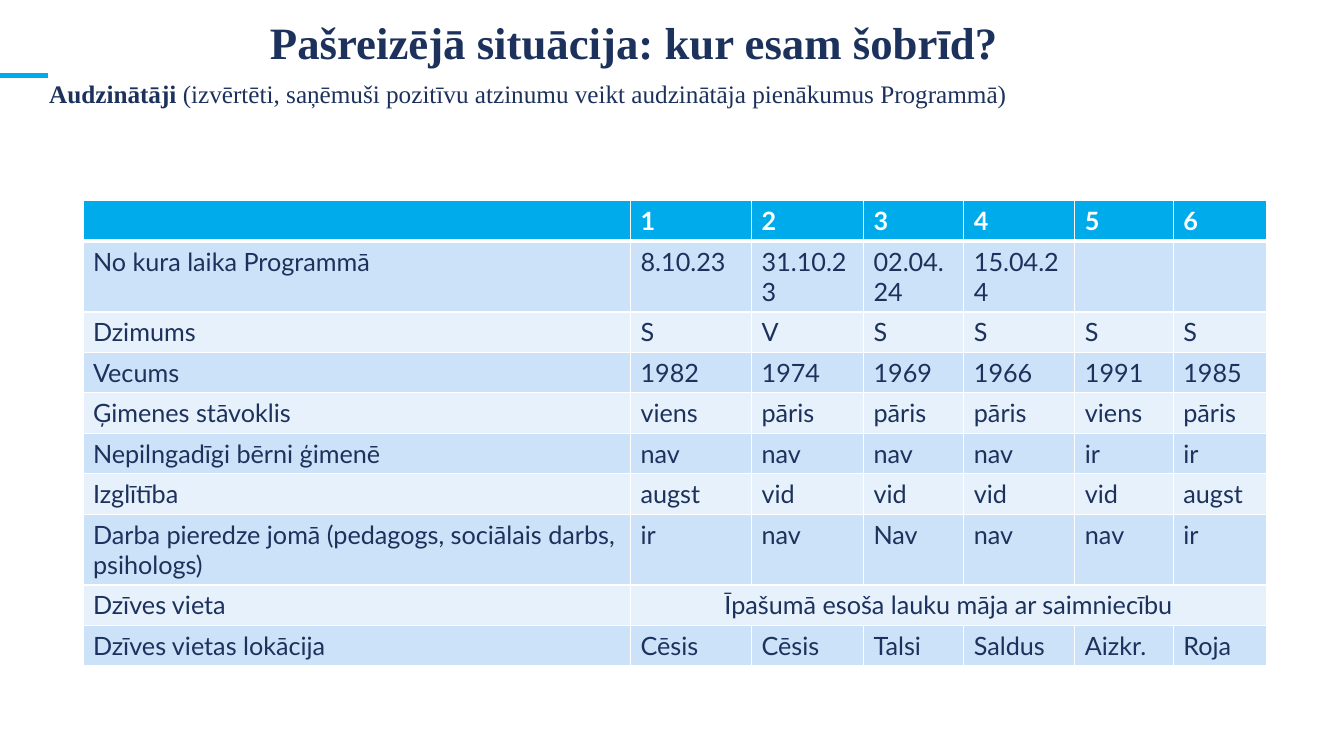
from dataclasses import dataclass

from lxml import etree
from pptx import Presentation
from pptx.dml.color import RGBColor
from pptx.enum.shapes import MSO_CONNECTOR
from pptx.enum.text import MSO_ANCHOR, MSO_AUTO_SIZE, PP_ALIGN
from pptx.oxml.ns import qn
from pptx.util import Cm, Pt

STRAIGHT = MSO_CONNECTOR.STRAIGHT
TOP, MIDDLE = MSO_ANCHOR.TOP, MSO_ANCHOR.MIDDLE
LEFT, CENTER = PP_ALIGN.LEFT, PP_ALIGN.CENTER
NO_AUTOFIT = MSO_AUTO_SIZE.NONE
TITLE_ONLY = 5


@dataclass(frozen=True)
class Theme:
    navy: str = "1C325D"
    cyan: str = "00ABEC"
    white: str = "FFFFFF"
    bands: tuple = ("CCE2F8", "E7F1FB")
    heading_font: str = "Times New Roman"
    table_font: str = "Lato"
    title_size: int = 32
    text_size: int = 18
    accent_width: float = 3.2
    border_width: int = 1
    header_border_width: int = 3


THEME = Theme()

COLUMN_WIDTHS = (13.8, 3.05, 2.82, 2.53, 2.8, 2.48, 2.35)
ROW_HEIGHT, TALL_ROW_HEIGHT = 1.02, 1.78
TALL_ROWS = (1, 7)
MENTOR_ROWS = (
    ("", "1", "2", "3", "4", "5", "6"),
    ("No kura laika Programmā", "8.10.23", "31.10.23", "02.04.24", "15.04.24", "", ""),
    ("Dzimums", "S", "V", "S", "S", "S", "S"),
    ("Vecums", "1982", "1974", "1969", "1966", "1991", "1985"),
    ("Ģimenes stāvoklis", "viens", "pāris", "pāris", "pāris", "viens", "pāris"),
    ("Nepilngadīgi bērni ģimenē", "nav", "nav", "nav", "nav", "ir", "ir"),
    ("Izglītība", "augst", "vid", "vid", "vid", "vid", "augst"),
    ("Darba pieredze jomā (pedagogs, sociālais darbs, psihologs)",
     "ir", "nav", "Nav", "nav", "nav", "ir"),
    ("Dzīves vieta", "Īpašumā esoša lauku māja ar saimniecību"),
    ("Dzīves vietas lokācija", "Cēsis", "Cēsis", "Talsi", "Saldus", "Aizkr.", "Roja"),
)


def write_text(frame, *runs, font=THEME.table_font, size=THEME.text_size,
               color=THEME.navy, align=LEFT, anchor=TOP):
    """Fill a frame with one paragraph made of (text, bold) runs."""
    frame.word_wrap = True
    frame.vertical_anchor = anchor
    paragraph = frame.paragraphs[0]
    paragraph.alignment = align
    for text, bold in runs:
        run = paragraph.add_run()
        run.text = text
        run.font.name = font
        run.font.size = Pt(size)
        run.font.bold = bold
        run.font.color.rgb = RGBColor.from_string(color)


def add_accent_line(slide):
    accent = slide.shapes.add_connector(STRAIGHT, Cm(0), Cm(1.9), Cm(1.2), Cm(1.9))
    accent.line.color.rgb = RGBColor.from_string(THEME.cyan)
    accent.line.width = Pt(THEME.accent_width)
    properties = accent._element.find(qn("p:spPr"))
    etree.SubElement(properties, qn("a:effectLst"))


def add_title(slide, text):
    title = slide.shapes.title
    title.left, title.top = Cm(6.55), Cm(0.23)
    title.width, title.height = Cm(22.25), Cm(1.63)
    write_text(title.text_frame, (text, True), font=THEME.heading_font,
               size=THEME.title_size, anchor=MIDDLE)
    title.text_frame.auto_size = NO_AUTOFIT


def add_subtitle(slide, *runs):
    subtitle = slide.shapes.add_textbox(Cm(0.99), Cm(1.86), Cm(26.67), Cm(1.02))
    write_text(subtitle.text_frame, *runs, font=THEME.heading_font)


def style_cell(cell, row):
    """Set white borders, then the header or band fill."""
    properties = cell._tc.get_or_add_tcPr()
    thick_side = {0: "lnB", 1: "lnT"}.get(row)
    for side in ("lnL", "lnR", "lnT", "lnB"):
        width = THEME.header_border_width if side == thick_side else THEME.border_width
        border = etree.SubElement(properties, qn(f"a:{side}"), w=str(Pt(width)))
        fill = etree.SubElement(border, qn("a:solidFill"))
        etree.SubElement(fill, qn("a:srgbClr"), val=THEME.white)
    cell.fill.solid()
    color = THEME.bands[(row - 1) % 2] if row else THEME.cyan
    cell.fill.fore_color.rgb = RGBColor.from_string(color)


def add_mentor_table(slide):
    heights = [TALL_ROW_HEIGHT if row in TALL_ROWS else ROW_HEIGHT
               for row in range(len(MENTOR_ROWS))]
    table = slide.shapes.add_table(
        len(heights), len(COLUMN_WIDTHS), Cm(2.09), Cm(5.06),
        Cm(sum(COLUMN_WIDTHS)), Cm(sum(heights))).table
    for column, width in zip(table.columns, COLUMN_WIDTHS):
        column.width = Cm(width)

    for row, values in enumerate(MENTOR_ROWS):
        table.rows[row].height = Cm(heights[row])
        for column in range(len(COLUMN_WIDTHS)):
            style_cell(table.cell(row, column), row)
        # A row with a single value shares it across all mentors
        shared = len(values) == 2
        if shared:
            table.cell(row, 1).merge(table.cell(row, len(COLUMN_WIDTHS) - 1))
        for column, value in enumerate(values):
            write_text(table.cell(row, column).text_frame, (value, row == 0),
                       color=THEME.navy if row else THEME.white,
                       align=CENTER if shared and column else LEFT)


def main():
    presentation = Presentation()
    presentation.slide_width, presentation.slide_height = Cm(33.87), Cm(19.05)
    slide = presentation.slides.add_slide(presentation.slide_layouts[TITLE_ONLY])

    # Heading
    add_accent_line(slide)
    add_title(slide, "Pašreizējā situācija: kur esam šobrīd?")
    add_subtitle(
        slide, ("Audzinātāji ", True),
        ("(izvērtēti, saņēmuši pozitīvu atzinumu veikt audzinātāja pienākumus Programmā)",
         False))

    # Mentor overview
    add_mentor_table(slide)
    presentation.save("out.pptx")


if __name__ == "__main__":
    main()
